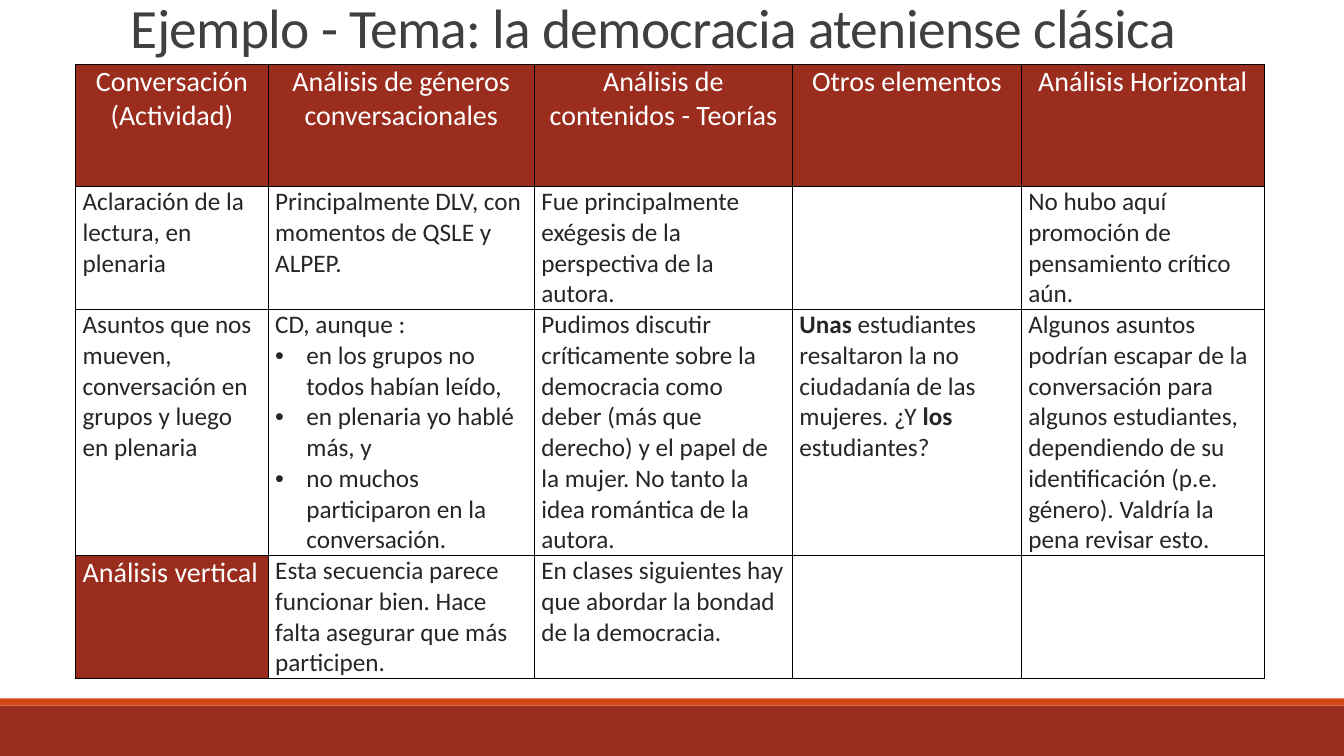
from dataclasses import dataclass

from lxml import etree
from pptx import Presentation
from pptx.dml.color import RGBColor
from pptx.enum.shapes import MSO_SHAPE
from pptx.enum.text import MSO_ANCHOR, PP_ALIGN
from pptx.oxml.ns import qn
from pptx.util import Inches, Pt

RECT = MSO_SHAPE.RECTANGLE
BOTTOM = MSO_ANCHOR.BOTTOM
LEFT, CENTER = PP_ALIGN.LEFT, PP_ALIGN.CENTER

RUST = RGBColor(0x9B, 0x2D, 0x1F)
ORANGE = RGBColor(0xD3, 0x48, 0x17)
WHITE = RGBColor(0xFF, 0xFF, 0xFF)
INK = RGBColor(0x26, 0x26, 0x26)
GRAY = RGBColor(0x40, 0x40, 0x40)
FONT = "Calibri"
BOLD, BULLET = "**", "• "

COLS = (1.91, 2.64, 2.56, 2.27, 2.41)
ROWS = (1.21, 0.7, 0.7, 0.7)
CELLS = (
    (
        "Conversación (Actividad)",
        "Análisis de géneros conversacionales",
        "Análisis de contenidos - Teorías",
        "Otros elementos",
        "Análisis Horizontal",
    ),
    (
        "Aclaración de la lectura, en plenaria",
        "Principalmente DLV, con momentos de QSLE y ALPEP.",
        "Fue principalmente exégesis de la perspectiva de la autora.",
        "",
        "No hubo aquí promoción de pensamiento crítico aún.",
    ),
    (
        "Asuntos que nos mueven, conversación en grupos y luego en plenaria",
        "CD, aunque :\n"
        "• en los grupos no todos habían leído,\n"
        "• en plenaria yo hablé más, y\n"
        "• no muchos participaron en la conversación.",
        "Pudimos discutir críticamente sobre la democracia como deber (más que derecho) "
        "y el papel de la mujer. No tanto la idea romántica de la autora.",
        "**Unas **estudiantes resaltaron la no ciudadanía de las mujeres. "
        "¿Y **los **estudiantes?",
        "Algunos asuntos podrían escapar de la conversación para algunos estudiantes, "
        "dependiendo de su identificación (p.e. género). Valdría la pena revisar esto.",
    ),
    (
        "Análisis vertical",
        "Esta secuencia parece funcionar bien. Hace falta asegurar que más participen.",
        "En clases siguientes hay que abordar la bondad de la democracia.",
        "",
        "",
    ),
)


@dataclass(frozen=True)
class Band:
    top: float
    height: float
    color: RGBColor


@dataclass(frozen=True)
class Style:
    size: float
    color: RGBColor
    fill: RGBColor
    align: PP_ALIGN


BANDS = (Band(7, 0.5, RUST), Band(6.93, 0.07, ORANGE))
HEAD = Style(20, WHITE, RUST, CENTER)
SIDE = Style(20, WHITE, RUST, LEFT)
BODY = Style(18, INK, WHITE, LEFT)


def set_font(font, size: float, color: RGBColor) -> None:
    font.name = FONT
    font.size = Pt(size)
    font.color.rgb = color


def add_band(slide, band: Band) -> None:
    shape = slide.shapes.add_shape(
        RECT, 0, Inches(band.top), Inches(13.33), Inches(band.height)
    )
    shape.shadow.inherit = False
    shape.fill.solid()
    shape.fill.fore_color.rgb = band.color
    shape.line.fill.background()


def add_title(slide) -> None:
    box = slide.shapes.add_textbox(Inches(1.2), 0, Inches(11), Inches(0.64))
    frame = box.text_frame
    frame.word_wrap = True
    frame.vertical_anchor = BOTTOM
    frame.text = "Ejemplo - Tema: la democracia ateniense clásica"
    para = frame.paragraphs[0]
    para.line_spacing = 0.85
    run = para.runs[0]
    set_font(run.font, 39.6, GRAY)
    run.font._element.set("spc", "-50")


def add_bullet(para) -> None:
    props = para._p.get_or_add_pPr()
    props.set("marL", str(Inches(0.31)))
    props.set("indent", str(-Inches(0.31)))
    etree.SubElement(props, qn("a:buFont"), typeface="Arial")
    etree.SubElement(props, qn("a:buChar"), char=BULLET.strip())


def set_edges(cell) -> None:
    """Draw a black line of one point on all four sides."""
    props = cell._tc.get_or_add_tcPr()
    for side in ("a:lnL", "a:lnR", "a:lnT", "a:lnB"):
        line = etree.SubElement(props, qn(side), w=str(Pt(1)))
        fill = etree.SubElement(line, qn("a:solidFill"))
        etree.SubElement(fill, qn("a:srgbClr"), val="000000")


def fill_cell(cell, text: str, style: Style) -> None:
    cell.margin_left = cell.margin_right = Inches(0.07)
    cell.margin_top = cell.margin_bottom = 0
    set_edges(cell)
    cell.fill.solid()
    cell.fill.fore_color.rgb = style.fill
    frame = cell.text_frame
    frame.text = text
    for para in frame.paragraphs:
        line = para.text
        para.alignment = style.align
        set_font(para.font, style.size, style.color)
        if line.startswith(BULLET):
            add_bullet(para)
        para.text = ""
        for i, part in enumerate(line.removeprefix(BULLET).split(BOLD)):
            if part:
                run = para.add_run()
                run.text = part
                run.font.bold = i % 2 == 1
                set_font(run.font, style.size, style.color)


def pick_style(row: int, col: int) -> Style:
    if row == 0:
        return HEAD
    return SIDE if (row, col) == (len(ROWS) - 1, 0) else BODY


def add_grid(slide) -> None:
    height = Inches(6.01)
    holder = slide.shapes.add_table(
        len(ROWS), len(COLS), Inches(0.75), Inches(0.64), Inches(11.8), height
    )
    table = holder.table
    table.first_row = table.horz_banding = False
    for col, width in zip(table.columns, COLS):
        col.width = Inches(width)
    for row, size in zip(table.rows, ROWS):
        row.height = Inches(size)
    holder.height = height
    for r, texts in enumerate(CELLS):
        for c, text in enumerate(texts):
            fill_cell(table.cell(r, c), text, pick_style(r, c))


def main() -> None:
    deck = Presentation()
    deck.slide_width, deck.slide_height = Inches(13.33), Inches(7.5)
    slide = deck.slides.add_slide(deck.slide_layouts[6])
    for band in BANDS:
        add_band(slide, band)
    add_grid(slide)
    add_title(slide)
    deck.save("out.pptx")


if __name__ == "__main__":
    main()
